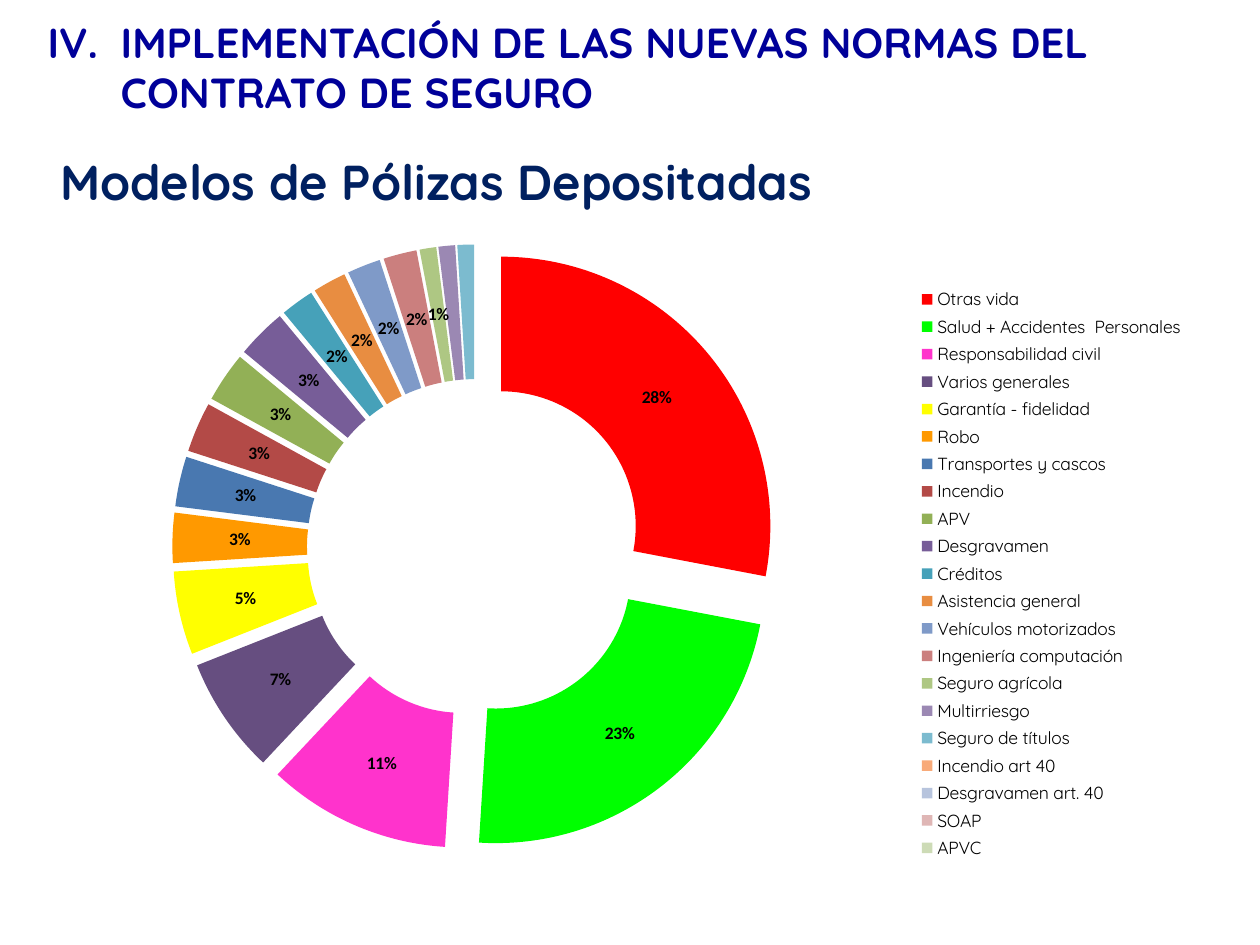
from lxml.etree import SubElement
from pptx import Presentation
from pptx.chart.data import CategoryChartData
from pptx.dml.color import RGBColor
from pptx.enum.chart import XL_CHART_TYPE, XL_LEGEND_POSITION
from pptx.oxml import parse_xml
from pptx.oxml.ns import nsdecls, qn
from pptx.util import Inches, Pt


def rgb(value):
    return RGBColor.from_string(value)


def add_text(s, text, box, size, color):
    sp = s.shapes.add_textbox(*[Inches(v) for v in box])
    tf = sp.text_frame
    tf.word_wrap = True
    p = tf.paragraphs[0]
    p.text = text
    f = p.runs[0].font
    f.name, f.size, f.bold = "Quicksand", Pt(size), True
    f.color.rgb = rgb(color)
    return p


prs = Presentation()
prs.slide_width, prs.slide_height = Inches(10), Inches(7.5)
s = prs.slides.add_slide(prs.slide_layouts[6])

add_text(s, "Modelos de Pólizas Depositadas", (0.38, 1.15, 7.93, 0.57), 28, "002060")

policies = [
    ("Otras vida", 28, "FF0000"),
    ("Salud + Accidentes  Personales", 23, "00FF00"),
    ("Responsabilidad civil", 11, "FF33CC"),
    ("Varios generales", 7, "664E80"),
    ("Garantía - fidelidad", 5, "FFFF00"),
    ("Robo", 3, "FF9900"),
    ("Transportes y cascos", 3, "4978B0"),
    ("Incendio", 3, "B34A47"),
    ("APV", 3, "92B056"),
    ("Desgravamen", 3, "775D98"),
    ("Créditos", 2, "46A1B9"),
    ("Asistencia general", 2, "E88D41"),
    ("Vehículos motorizados", 2, "7F9AC8"),
    ("Ingeniería computación", 2, "CB7F7E"),
    ("Seguro agrícola", 1, "AEC783"),
    ("Multirriesgo", 1, "9B88B3"),
    ("Seguro de títulos", 1, "7CBBCF"),
    ("Incendio art 40", 0, "F8AA79"),
    ("Desgravamen art. 40", 0, "B7C4DD"),
    ("SOAP", 0, "DFB6B5"),
    ("APVC", 0, "CDDBB6"),
]
data = CategoryChartData()
data.categories = [name for name, share, color in policies]
data.add_series("Series 1", [share for name, share, color in policies])
box = [Inches(v) for v in (0.32, 1.28, 9.33, 6.01)]
chart = s.shapes.add_chart(XL_CHART_TYPE.DOUGHNUT_EXPLODED, *box, data).chart
chart.has_title = False
chart.font.name, chart.font.size = "Calibri", Pt(10)
chart.font.color.rgb = rgb("000000")
chart.has_legend = True
legend = chart.legend
legend.position = XL_LEGEND_POSITION.RIGHT
legend.include_in_layout = False
legend.font.name, legend.font.size = "Quicksand", Pt(10)

plot = chart.plots[0]
plot.vary_by_categories = True
series = plot.series[0]
for i, (name, share, color) in enumerate(policies):
    fill = series.points[i].format.fill
    fill.solid()
    fill.fore_color.rgb = rgb(color)

ser = series._element
for old in ser.findall(qn("c:explosion")):
    ser.remove(old)
ser.find(qn("c:dPt")).addprevious(
    parse_xml(f'<c:explosion {nsdecls("c")} val="25"/>'))

labels = series.data_labels
labels.show_percentage = True
labels.show_value = False
labels.number_format, labels.number_format_is_linked = "0%", False
labels.font.bold, labels.font.size = True, Pt(10)
labels.font.name = "Calibri"
labels.font.color.rgb = rgb("000000")
for n, i in enumerate((15, 16, 17, 18, 20)):
    labels._element.insert(n, parse_xml(
        f'<c:dLbl {nsdecls("c")}><c:idx val="{i}"/><c:delete val="1"/></c:dLbl>'))

plot_area = chart._chartSpace.chart.plotArea
for old in plot_area.findall(qn("c:layout")):
    plot_area.remove(old)
layouts = []
for inner, frame in ((True, (0.11, 0.11, 0.52, 0.8)), (False, (0.73, 0.16, 0.26, 0.77))):
    layout = parse_xml(f'<c:layout {nsdecls("c")}/>')
    manual = SubElement(layout, qn("c:manualLayout"))
    if inner:
        SubElement(manual, qn("c:layoutTarget")).set("val", "inner")
    for tag in ("xMode", "yMode"):
        SubElement(manual, qn(f"c:{tag}")).set("val", "edge")
    for tag, value in zip("xywh", frame):
        SubElement(manual, qn(f"c:{tag}")).set("val", str(value))
    layouts.append(layout)
plot_area.insert(0, layouts[0])
for old in legend._element.findall(qn("c:layout")):
    legend._element.remove(old)
legend._element.find(qn("c:legendPos")).addnext(layouts[1])

p = add_text(s, "IMPLEMENTACIÓN DE LAS NUEVAS NORMAS DEL CONTRATO DE SEGURO",
             (0.28, 0.08, 9.45, 0.91), 24, "000099")
pPr = p._p.get_or_add_pPr()
pPr.set("marL", str(Inches(0.58)))
pPr.set("indent", str(Inches(-0.58)))
number = SubElement(pPr, qn("a:buAutoNum"))
number.set("type", "romanUcPeriod")
number.set("startAt", "4")

prs.save("out.pptx")
